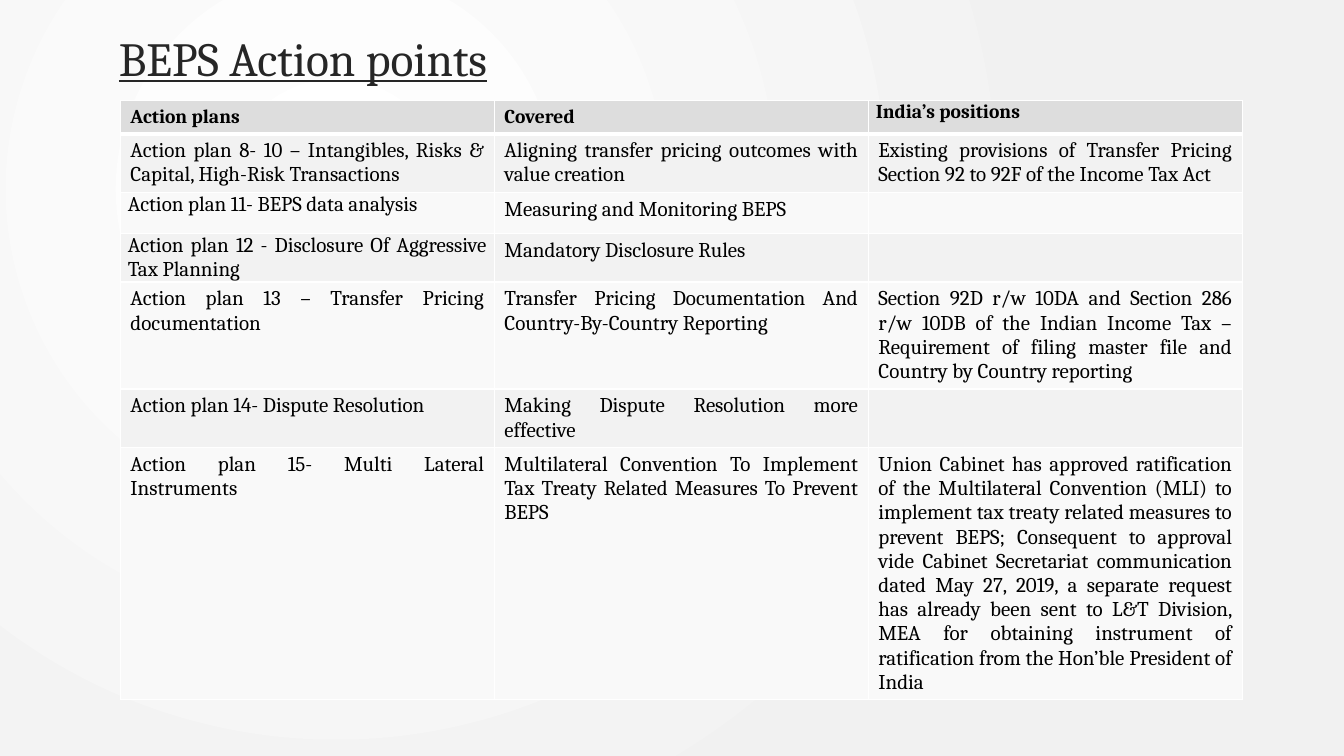
from dataclasses import dataclass

from lxml import etree
from pptx import Presentation
from pptx.dml.color import RGBColor
from pptx.enum.text import MSO_ANCHOR, MSO_AUTO_SIZE, PP_ALIGN
from pptx.oxml import parse_xml
from pptx.oxml.ns import qn
from pptx.util import Pt

JUSTIFY = PP_ALIGN.JUSTIFY
LEFT = PP_ALIGN.LEFT
MIDDLE = MSO_ANCHOR.MIDDLE
NO_AUTOFIT = MSO_AUTO_SIZE.NONE
FONT = "Cambria"
TITLE_ONLY = 5
HEADER_FILL = "DDDDDD"
BAND_FILLS = ("F9F9F9", "F2F2F2")
BORDER = "FFFFFF"
COLUMN_WIDTH = 267.12

BACKGROUND = """
<a:gradFill xmlns:a="http://schemas.openxmlformats.org/drawingml/2006/main" rotWithShape="1">
  <a:gsLst>
    <a:gs pos="0"><a:srgbClr val="FFFFFF"/></a:gs>
    <a:gs pos="100000"><a:srgbClr val="F1F1F1"/></a:gs>
  </a:gsLst>
  <a:path path="circle"><a:fillToRect l="50000" t="50000" r="100000" b="100000"/></a:path>
</a:gradFill>"""


@dataclass
class ActionRow:
    height: float
    texts: tuple[str, str, str]
    tight_column: int | None = None


ROWS = [
    ActionRow(23.5, ("Action plans", "Covered", "India’s positions"), tight_column=2),
    ActionRow(41.5, (
        "Action plan 8- 10 – Intangibles, Risks & Capital, High-Risk Transactions",
        "Aligning transfer pricing outcomes with value creation",
        "Existing provisions of Transfer Pricing Section 92 to 92F of the Income Tax Act",
    )),
    ActionRow(29.5, (
        "Action plan 11- BEPS data analysis", "Measuring and Monitoring BEPS", "",
    ), tight_column=0),
    ActionRow(34.5, (
        "Action plan 12 - Disclosure Of Aggressive Tax Planning",
        "Mandatory Disclosure Rules",
        "",
    ), tight_column=0),
    ActionRow(76, (
        "Action plan 13 – Transfer Pricing documentation",
        "Transfer Pricing Documentation And Country-By-Country Reporting",
        "Section 92D r/w 10DA and Section 286 r/w 10DB of the Indian Income Tax – "
        "Requirement of filing master file and Country by Country reporting",
    )),
    ActionRow(41.5, (
        "Action plan 14- Dispute Resolution", "Making Dispute Resolution more effective", "",
    )),
    ActionRow(180, (
        "Action plan 15- Multi Lateral Instruments",
        "Multilateral Convention To Implement Tax Treaty Related Measures To Prevent BEPS",
        "Union Cabinet has approved ratification of the Multilateral Convention (MLI) to "
        "implement tax treaty related measures to prevent BEPS; Consequent to approval vide "
        "Cabinet Secretariat communication dated May 27, 2019, a separate request has already "
        "been sent to L&T Division, MEA for obtaining instrument of ratification from the "
        "Hon’ble President of India",
    )),
]


def color(value: str) -> RGBColor:
    return RGBColor.from_string(value)


def format_text(paragraph, size: float, text_color: str, bold: bool, alignment) -> None:
    paragraph.alignment = alignment
    for run in paragraph.runs:
        run.font.name = FONT
        run.font.size = Pt(size)
        run.font.bold = bold
        run.font.color.rgb = color(text_color)


def set_background(slide) -> None:
    slide.background.fill.solid()
    solid = slide.element.find(".//" + qn("p:bgPr")).find(qn("a:solidFill"))
    solid.getparent().replace(solid, parse_xml(BACKGROUND))


def set_borders(cell, top: float, bottom: float) -> None:
    properties = cell._tc.get_or_add_tcPr()
    for side, width in (("L", 1), ("R", 1), ("T", top), ("B", bottom)):
        line = etree.SubElement(properties, qn(f"a:ln{side}"), w=str(Pt(width)))
        fill = etree.SubElement(line, qn("a:solidFill"))
        etree.SubElement(fill, qn("a:srgbClr"), val=BORDER)


def add_title(slide, text: str) -> None:
    title = slide.shapes.title
    title.left, title.top, title.width, title.height = Pt(77.76), Pt(15.12), Pt(702), Pt(56.88)
    frame = title.text_frame
    frame.text = text
    frame.word_wrap = True
    frame.auto_size = NO_AUTOFIT
    frame.vertical_anchor = MIDDLE
    paragraph = frame.paragraphs[0]
    paragraph.line_spacing = 0.9
    format_text(paragraph, 34, "262626", False, LEFT)
    paragraph.runs[0].font.underline = True


def fill_cell(cell, text: str, row_index: int, tight: bool) -> None:
    is_header = row_index == 0
    set_borders(cell, 3 if row_index == 1 else 1, 3 if is_header else 1)
    cell.fill.solid()
    cell.fill.fore_color.rgb = color(HEADER_FILL if is_header else BAND_FILLS[row_index % 2])
    if tight:
        cell.margin_left = cell.margin_right = Pt(5.4)
        cell.margin_top = cell.margin_bottom = Pt(0)
    if text:
        cell.text_frame.text = text
        format_text(cell.text_frame.paragraphs[0], 14 if is_header else 15,
                    "000000", is_header, JUSTIFY)


def add_action_table(slide, rows: list[ActionRow]) -> None:
    columns = len(rows[0].texts)
    height = sum(row.height for row in rows)
    table = slide.shapes.add_table(len(rows), columns, Pt(86), Pt(72),
                                   Pt(columns * COLUMN_WIDTH), Pt(height)).table
    table.horz_banding = False
    for column in table.columns:
        column.width = Pt(COLUMN_WIDTH)
    for row_index, row in enumerate(rows):
        table.rows[row_index].height = Pt(row.height)
        for column_index, text in enumerate(row.texts):
            fill_cell(table.cell(row_index, column_index), text, row_index,
                      column_index == row.tight_column)


def main() -> None:
    presentation = Presentation()
    presentation.slide_width, presentation.slide_height = Pt(960), Pt(540)
    slide = presentation.slides.add_slide(presentation.slide_layouts[TITLE_ONLY])
    set_background(slide)
    add_title(slide, "BEPS Action points")
    add_action_table(slide, ROWS)
    presentation.save("out.pptx")


if __name__ == "__main__":
    main()
